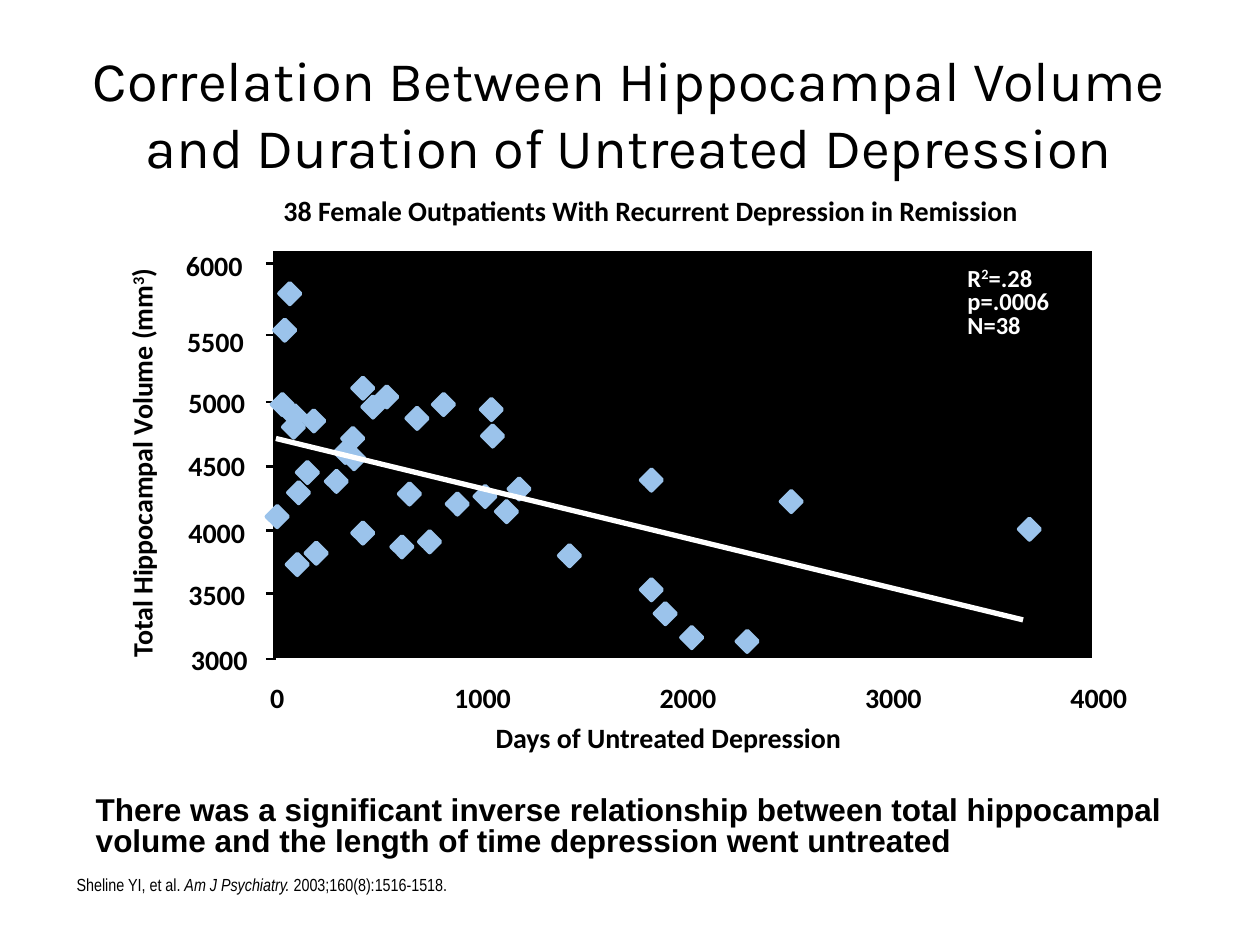
from lxml import etree
from pptx import Presentation
from pptx.dml.color import RGBColor
from pptx.enum.shapes import MSO_CONNECTOR, MSO_SHAPE
from pptx.enum.text import MSO_ANCHOR, MSO_AUTO_SIZE, PP_ALIGN
from pptx.oxml.ns import qn
from pptx.util import Inches, Pt

TOP, MIDDLE, BOTTOM = MSO_ANCHOR.TOP, MSO_ANCHOR.MIDDLE, MSO_ANCHOR.BOTTOM
LEFT, CENTER = PP_ALIGN.LEFT, PP_ALIGN.CENTER
GROW, FIXED = MSO_AUTO_SIZE.SHAPE_TO_FIT_TEXT, MSO_AUTO_SIZE.NONE
RECTANGLE, STRAIGHT = MSO_SHAPE.RECTANGLE, MSO_CONNECTOR.STRAIGHT

BLACK, WHITE, BLUE = "000000", "FFFFFF", "9BC3EB"
LABEL = {"name": "Calibri", "size": Pt(16), "bold": True}
STATISTIC = {"name": "Calibri", "size": Pt(14), "bold": True}
CITATION = {"name": "Arial Narrow", "size": Pt(10)}
TITLE = {"name": "Karla", "size": Pt(32)}
CONCLUSION = {"name": "Arial", "size": Pt(18), "bold": True}

PLOT = (2.16, 1.98, 6.52, 3.25)
MARKER_SIZE = 0.12
MARKERS = [  # left and top of each patient's marker
    (2.24, 2.27), (2.2, 2.56), (2.18, 3.15), (2.28, 3.24), (2.27, 3.33),
    (2.43, 3.28), (2.82, 3.02), (2.9, 3.17), (3.01, 3.09), (3.25, 3.26),
    (3.46, 3.15), (3.84, 3.19), (3.85, 3.4), (2.74, 3.42), (2.68, 3.53),
    (2.75, 3.58), (2.61, 3.76), (2.38, 3.69), (2.31, 3.85), (2.14, 4.04),
    (2.3, 4.42), (2.45, 4.33), (2.82, 4.17), (3.13, 4.28), (3.35, 4.24),
    (3.57, 3.94), (3.19, 3.86), (3.79, 3.88), (4.06, 3.82), (3.96, 4),
    (4.46, 4.35), (5.11, 3.75), (6.22, 3.92), (5.11, 4.62), (5.22, 4.81),
    (5.43, 5), (5.87, 5.03), (8.11, 4.14),
]
VOLUME_AXIS = [  # value, label left, label top, tick height on the page
    (6000, 1.3, 1.92, 2.09), (5500, 1.31, 2.52, 2.66), (5000, 1.32, 3.01, 3.19),
    (4500, 1.32, 3.51, 3.7), (4000, 1.32, 4.04, 4.21), (3500, 1.32, 4.53, 4.71),
    (3000, 1.34, 5.05, 5.23),
]


def color(value):
    return RGBColor.from_string(value)


def set_attributes(target, values):
    for name, value in values.items():
        setattr(target, name, value)


def place(shape, at):
    names = ("left", "top", "width", "height")
    set_attributes(shape, dict(zip(names, map(Inches, at))))


def write(para, spans, font, ink=BLACK, align=CENTER, spacing=1.0):
    """Fill a paragraph from spans: plain strings or (text, style) pairs."""
    set_attributes(para, {"alignment": align, "line_spacing": spacing,
                          "space_before": Pt(0)})
    for item in spans:
        text, style = (item, None) if isinstance(item, str) else item
        span = para.add_run()
        span.text = text
        set_attributes(span.font, font)
        span.font.color.rgb = color(ink)
        if style == "italic":
            span.font.italic = True
        elif style == "superscript":
            span.font._element.set("baseline", "30000")


def add_text(page, at, lines, font, anchor=TOP, wrap=True, **options):
    box = page.shapes.add_textbox(*map(Inches, at))
    frame = box.text_frame
    set_attributes(frame, {"word_wrap": wrap, "auto_size": GROW,
                           "vertical_anchor": anchor})
    for index, spans in enumerate(lines):
        para = frame.add_paragraph() if index else frame.paragraphs[0]
        write(para, spans, font, **options)
    return box


def add_rectangle(shapes, at, fill, outline, weight):
    shape = shapes.add_shape(RECTANGLE, *map(Inches, at))
    shape.shadow.inherit = False
    shape.fill.solid()
    shape.fill.fore_color.rgb = color(fill)
    shape.line.color.rgb = color(outline)
    shape.line.width = Pt(weight)
    return shape


def add_line(page, start, end, ink, weight):
    line = page.shapes.add_connector(STRAIGHT, *map(Inches, start + end))
    line.line.color.rgb = color(ink)
    line.line.width = Pt(weight)
    etree.SubElement(line._element.spPr, qn("a:effectLst"))


def fill_title(page):
    title = page.shapes.title
    place(title, (0.25, 0.27, 9.49, 1.25))
    set_attributes(title.text_frame, {"vertical_anchor": MIDDLE, "auto_size": FIXED})
    write(title.text_frame.paragraphs[0],
          ["Correlation Between Hippocampal Volume and Duration of Untreated Depression"],
          TITLE)


def fill_conclusion(page):
    body = page.placeholders[1]
    place(body, (0.51, 6.33, 8.89, 0.48))
    frame = body.text_frame
    set_attributes(frame, {"margin_left": 0, "margin_top": 0, "margin_right": 0,
                           "margin_bottom": 0, "auto_size": GROW})
    para = frame.paragraphs[0]
    properties = para._p.get_or_add_pPr()
    set_attributes(para, {"alignment": LEFT})
    properties.set("marL", str(Inches(0.25)))
    properties.set("indent", "0")
    etree.SubElement(properties, qn("a:buNone"))
    write(para, ["There was a significant inverse relationship between total "
                 "hippocampal volume and the length of time depression went untreated"],
          CONCLUSION, align=LEFT, spacing=0.8)


def add_axes(page):
    add_text(page, (3.72, 5.72, 3.17, 0.32), [["Days of Untreated Depression"]],
             LABEL, spacing=0.8)
    volume = add_text(page, (-0.54, 3.49, 3.33, 0.37),
                      [["Total Hippocampal Volume (mm", ("3", "superscript"), ")"]],
                      LABEL, wrap=False)
    volume.rotation = 270
    for index in range(5):
        add_text(page, (1.8 + 1.63 * index, 5.35, 0.8, 0.37),
                 [[str(1000 * index)]], LABEL)
    for value, left, top, height in VOLUME_AXIS:
        add_text(page, (left, top, 0.8, 0.37), [[str(value)]], LABEL, anchor=MIDDLE)
        add_line(page, (2.11, height), (2.19, height), BLACK, 1.5)


def add_markers(page):
    group = page.shapes.add_group_shape()
    for left, top in MARKERS:
        marker = add_rectangle(group.shapes, (left, top, MARKER_SIZE, MARKER_SIZE),
                               BLUE, BLUE, 2.25)
        marker.rotation = 45


def main():
    deck = Presentation()
    deck.slide_width, deck.slide_height = Inches(10), Inches(7.5)
    page = deck.slides.add_slide(deck.slide_layouts[1])
    fill_title(page)
    add_text(page, (1.59, 1.54, 7.15, 0.32),
             [["38 Female Outpatients With Recurrent Depression in Remission"]],
             LABEL, spacing=0.8)
    add_rectangle(page.shapes, PLOT, BLACK, WHITE, 1.5)
    add_text(page, (7.58, 2.08, 1.15, 0.67),
             [["R", ("2", "superscript"), "=.28"], ["p=.0006"], ["N=38"]],
             STATISTIC, ink=WHITE, align=LEFT, spacing=0.8)
    add_axes(page)
    add_markers(page)
    add_line(page, (2.19, 3.48), (8.12, 4.92), WHITE, 3)
    fill_conclusion(page)
    add_text(page, (0.51, 6.92, 8.15, 0.23),
             [["Sheline YI, et al. ", ("Am J Psychiatry.", "italic"),
               " 2003;160(8):1516-1518."]],
             CITATION, anchor=BOTTOM, align=LEFT, spacing=0.8)
    deck.save("out.pptx")


if __name__ == "__main__":
    main()
